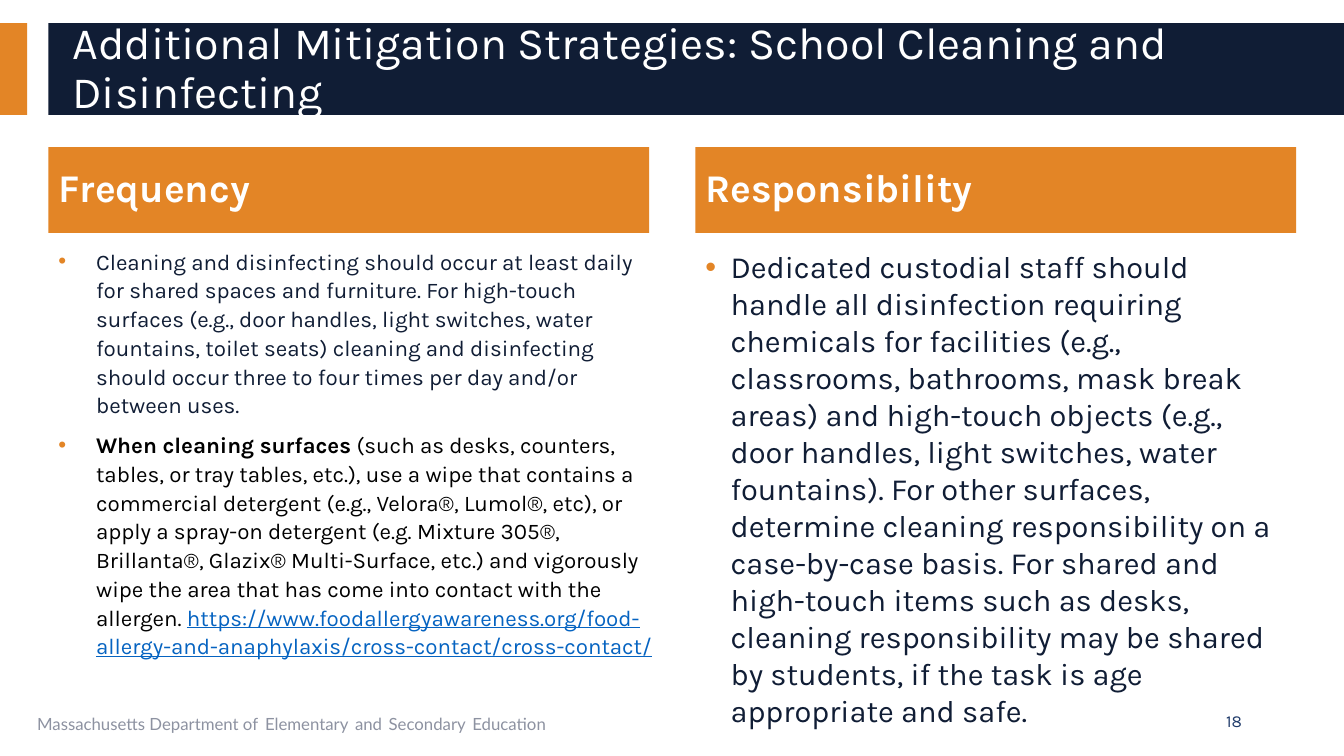
import pptx
import pptx.dml.color
import pptx.enum.shapes
import pptx.enum.text
import pptx.oxml.ns
import pptx.util
from lxml import etree

Pt = pptx.util.Pt
ANCHOR = pptx.enum.text.MSO_ANCHOR
ALIGN = pptx.enum.text.PP_ALIGN

COLORS = {"orange": "E38526", "navy": "101D35", "white": "FFFFFF", "black": "000000",
          "link": "0563C1", "gray": "8D92A1", "blue": "203B6A"}

# Content: a paragraph is a list of (text, run format) pairs
TITLE = "Additional Mitigation Strategies: School Cleaning and Disinfecting"
HEADINGS = ["Frequency", "Responsibility"]
FREQUENCY = [
    [("Cleaning and disinfecting should occur at least daily for shared spaces and furniture. "
      "For high-touch surfaces (e.g., door handles, light switches, water fountains, toilet seats) "
      "cleaning and disinfecting should occur three to four times per day and/or between uses.", {})],
    [("When cleaning surfaces", {"color": "black", "bold": True}),
     (" (such as desks, counters, tables, or tray tables, etc.), use a wipe that contains a "
      "commercial detergent (e.g., Velora®, Lumol®, etc), or apply a spray-on detergent "
      "(e.g. Mixture 305®, Brillanta®, Glazix® Multi-Surface, etc.) and vigorously wipe the area "
      "that has come into contact with the allergen. ", {"color": "black"}),
     ("https://www.foodallergyawareness.org/food-allergy-and-anaphylaxis/cross-contact/cross-contact/",
      {"color": "link", "underline": True})],
]
RESPONSIBILITY = [[(
    "Dedicated custodial staff should handle all disinfection requiring chemicals for facilities "
    "(e.g., classrooms, bathrooms, mask break areas) and high-touch objects (e.g., door handles, "
    "light switches, water fountains). For other surfaces, determine cleaning responsibility on a "
    "case-by-case basis. For shared and high-touch items such as desks, cleaning responsibility "
    "may be shared by students, if the task is age appropriate and safe.", {})]]
FOOTER = ["Massachusetts Department of", "Elementary", "and", "Secondary", "Education"]
PAGE_NUMBER = "18"

# Layout in points
SLIDE_WIDTH, SLIDE_HEIGHT = 960, 540
LEFT = 34.56
COLUMN_WIDTH, COLUMN_STEP = 429.12, 462.24
BAND_TOP, BAND_HEIGHT = 16.56, 65.52
HEADING_TOP, HEADING_HEIGHT = 105.12, 61.2
FOOTER_TOP, FOOTER_HEIGHT = 500.4, 28.8

presentation = pptx.Presentation()
presentation.slide_width = Pt(SLIDE_WIDTH)
presentation.slide_height = Pt(SLIDE_HEIGHT)
slide = presentation.slides.add_slide(presentation.slide_layouts[6])


def rgb(name):
    return pptx.dml.color.RGBColor.from_string(COLORS[name])


def add_bullet(paragraph, indent):
    properties = paragraph._p.get_or_add_pPr()
    properties.set("marL", str(Pt(indent)))
    properties.set("indent", str(-Pt(indent)))
    qn = pptx.oxml.ns.qn
    bullet_color = etree.SubElement(properties, qn("a:buClr"))
    etree.SubElement(bullet_color, qn("a:srgbClr"), val=COLORS["orange"])
    etree.SubElement(properties, qn("a:buFont"), typeface="Arial")
    etree.SubElement(properties, qn("a:buChar"), char="•")


def add_rectangle(left, top, width, height, color):
    shape = slide.shapes.add_shape(pptx.enum.shapes.MSO_SHAPE.RECTANGLE,
                                   Pt(left), Pt(top), Pt(width), Pt(height))
    shape.shadow.inherit = False
    shape.fill.solid()
    shape.fill.fore_color.rgb = rgb(color)
    shape.line.fill.background()
    return shape


def add_box(left, top, width, height):
    return slide.shapes.add_textbox(Pt(left), Pt(top), Pt(width), Pt(height))


def write_text(shape, paragraphs, size, color, font="Karla", bold=False, align=ALIGN.LEFT,
               anchor=ANCHOR.TOP, spacing=1.0, after=0, indent=0):
    frame = shape.text_frame
    frame.word_wrap = True
    frame.vertical_anchor = anchor
    for index, runs in enumerate(paragraphs):
        paragraph = frame.add_paragraph() if index else frame.paragraphs[0]
        if indent:
            add_bullet(paragraph, indent)
        paragraph.alignment = align
        paragraph.line_spacing = spacing
        paragraph.space_after = Pt(after)
        for text, run_format in runs:
            run = paragraph.add_run()
            run.text = text
            run.font.name = font
            run.font.size = Pt(run_format.get("size", size))
            run.font.color.rgb = rgb(run_format.get("color", color))
            run.font.bold = run_format.get("bold", bold)
            run.font.underline = run_format.get("underline", False)


# Title band
add_rectangle(0, BAND_TOP, 19.44, BAND_HEIGHT, "orange")
add_rectangle(LEFT, BAND_TOP, SLIDE_WIDTH - LEFT, BAND_HEIGHT, "navy")
write_text(add_box(44.64, 23.04, 900, 53.28), [[(TITLE, {})]], 32, "white",
           anchor=ANCHOR.MIDDLE, spacing=0.9)

# Column headings
for column, heading in enumerate(HEADINGS):
    bar = add_rectangle(LEFT + column * COLUMN_STEP, HEADING_TOP, COLUMN_WIDTH, HEADING_HEIGHT, "orange")
    write_text(bar, [[(heading, {})]], 28, "white", bold=True, anchor=ANCHOR.MIDDLE, spacing=0.9)

# Column bodies
write_text(add_box(LEFT, 172.08, 445.68, 300.24), FREQUENCY, 16, "navy",
           spacing=1.07, after=8, indent=27)
write_text(add_box(LEFT + COLUMN_STEP, 173.52, COLUMN_WIDTH, 298.8), RESPONSIBILITY, 22, "navy", indent=18)

# Footer: small words joined by larger spaces
footer_runs = [(FOOTER[0], {})]
for word in FOOTER[1:]:
    footer_runs += [(" ", {"size": 18, "color": "blue"}), (word, {})]
write_text(add_box(19.44, FOOTER_TOP, 607.68, FOOTER_HEIGHT), [footer_runs], 12, "gray", font="Lato")
write_text(add_box(678.24, FOOTER_TOP, 216, FOOTER_HEIGHT), [[(PAGE_NUMBER, {})]], 12, "blue",
           align=ALIGN.RIGHT, anchor=ANCHOR.MIDDLE)

presentation.save("out.pptx")
